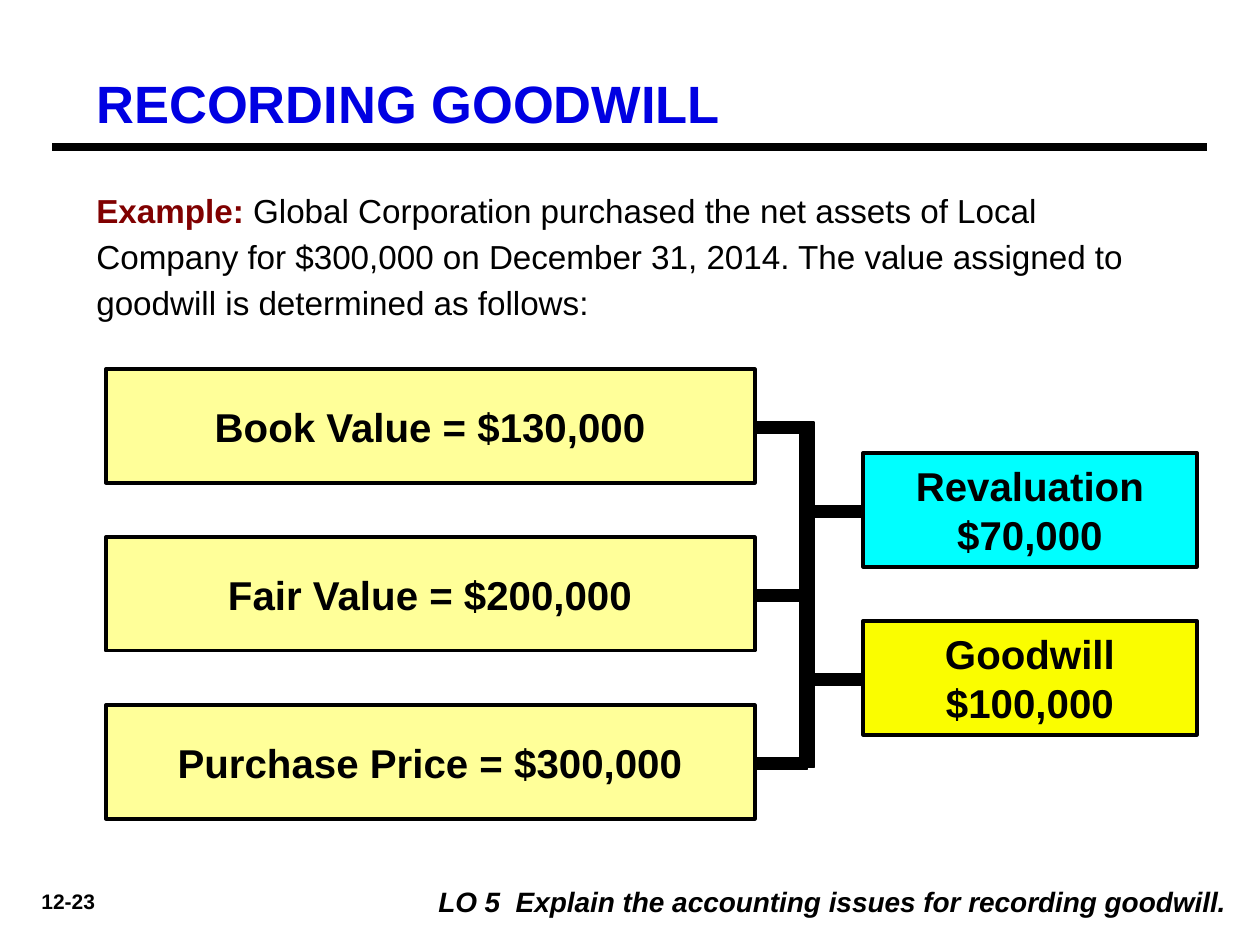
from lxml.etree import SubElement
from pptx import Presentation
from pptx.dml.color import RGBColor
from pptx.enum.shapes import MSO_CONNECTOR, MSO_SHAPE
from pptx.enum.text import MSO_ANCHOR as Anchor, PP_ALIGN as Align
from pptx.oxml.ns import qn
from pptx.util import Pt

BLACK = RGBColor(0x00, 0x00, 0x00)
WHITE = RGBColor(0xFF, 0xFF, 0xFF)
BLUE = RGBColor(0x00, 0x00, 0xE2)
MAROON = RGBColor(0x80, 0x00, 0x00)
CREAM = RGBColor(0xFF, 0xFF, 0x99)
CYAN = RGBColor(0x00, 0xFF, 0xFF)
YELLOW = RGBColor(0xFA, 0xFD, 0x00)

FONT = "Arial"
VALUES = ["Book Value = $130,000", "Fair Value = $200,000", "Purchase Price = $300,000"]
DIFFERENCES = [("Revaluation", "$70,000", CYAN), ("Goodwill", "$100,000", YELLOW)]


def add_run(paragraph, text, size, color=BLACK, bold=True, italic=False):
    run = paragraph.add_run()
    run.text = text
    font = run.font
    font.name, font.size, font.bold, font.italic = FONT, Pt(size), bold, italic
    font.color.rgb = color


def add_text(slide, box, text, align=Align.LEFT, anchor=Anchor.TOP, **font):
    shape = slide.shapes.add_textbox(*map(Pt, box))
    frame = shape.text_frame
    frame.word_wrap = True
    frame.vertical_anchor = anchor
    paragraph = frame.paragraphs[0]
    paragraph.alignment = align
    add_run(paragraph, text, **font)
    return shape


def add_rectangle(slide, box, fill, line_width):
    shape = slide.shapes.add_shape(MSO_SHAPE.RECTANGLE, *map(Pt, box))
    shape.shadow.inherit = False
    shape.fill.solid()
    shape.fill.fore_color.rgb = fill
    shape.line.color.rgb = BLACK
    shape.line.width = Pt(line_width)
    return shape


def add_amount_box(slide, box, lines, fill):
    frame = add_rectangle(slide, box, fill, 2.25).text_frame
    frame.word_wrap = False
    frame.vertical_anchor = Anchor.MIDDLE
    for index, text in enumerate(lines):
        paragraph = frame.add_paragraph() if index else frame.paragraphs[0]
        paragraph.alignment = Align.CENTER
        add_run(paragraph, text, size=23)


def add_header(slide, left, top, width, height):
    add_text(slide, (left + 18, top, width - 60, height - 4), "RECORDING GOODWILL",
             anchor=Anchor.BOTTOM, size=30, color=BLUE)
    rule_y = Pt(top + height)
    rule = slide.shapes.add_connector(
        MSO_CONNECTOR.STRAIGHT, Pt(left), rule_y, Pt(left + width), rule_y)
    rule.line.color.rgb = BLACK
    rule.line.width = Pt(4.5)
    SubElement(rule.line._get_or_add_ln().getparent(), qn("a:effectLst"))


def add_example(slide, box):
    shape = add_text(slide, box, "Example: ", size=19, color=MAROON)
    paragraph = shape.text_frame.paragraphs[0]
    paragraph.line_spacing = 1.15
    add_run(paragraph, "Global Corporation purchased the net assets of Local Company "
            "for $300,000 on December 31, 2014. The value assigned to goodwill is "
            "determined as follows:", size=19, bold=False)


def add_goodwill_diagram(slide, left, top, width):
    """Values on the left, joined by a bracket to the differences between them."""
    pitch, box_height = 96, 64.8
    value_width, difference_width = 370.8, 190.8
    bar, spine_width, branch = 6.5, 8, 30.2
    value_right = left + value_width
    spine_left = value_right + 26
    difference_left = left + width - difference_width

    def add_branch(branch_left, box_top):
        center = box_top + box_height / 2
        add_rectangle(slide, (branch_left, center + 0.7 - bar / 2, branch, bar), BLACK, 1)

    spine_top = top + box_height / 2 - bar / 2 + 1
    add_rectangle(slide, (spine_left, spine_top, spine_width, 2 * pitch + bar - 1), BLACK, 1)
    for index, text in enumerate(VALUES):
        box_top = top + index * pitch
        add_branch(value_right, box_top)
        add_amount_box(slide, (left, box_top, value_width, box_height), [text], CREAM)
    for index, (name, amount, fill) in enumerate(DIFFERENCES):
        box_top = top + (index + 0.5) * pitch
        add_branch(difference_left - branch, box_top)
        add_amount_box(slide, (difference_left, box_top, difference_width, box_height),
                       [name, amount], fill)


def add_footer(slide, left, top, width):
    add_text(slide, (left, top + 2, 66, 22), "12-23", align=Align.CENTER, size=12)
    objective = add_text(
        slide, (left + 120, top, width - 120, 26.5),
        "LO 5  Explain the accounting issues for recording goodwill.",
        align=Align.RIGHT, size=16, italic=True)
    objective.fill.solid()
    objective.fill.fore_color.rgb = WHITE


def main():
    presentation = Presentation()
    presentation.slide_width, presentation.slide_height = Pt(720), Pt(540)
    slide = presentation.slides.add_slide(presentation.slide_layouts[6])
    add_header(slide, 30, 36, 660, 48)
    add_example(slide, (48, 102, 636, 86))
    add_goodwill_diagram(slide, 60.5, 211, 623.5)
    add_footer(slide, 6, 502, 702)
    presentation.save("out.pptx")


if __name__ == "__main__":
    main()
